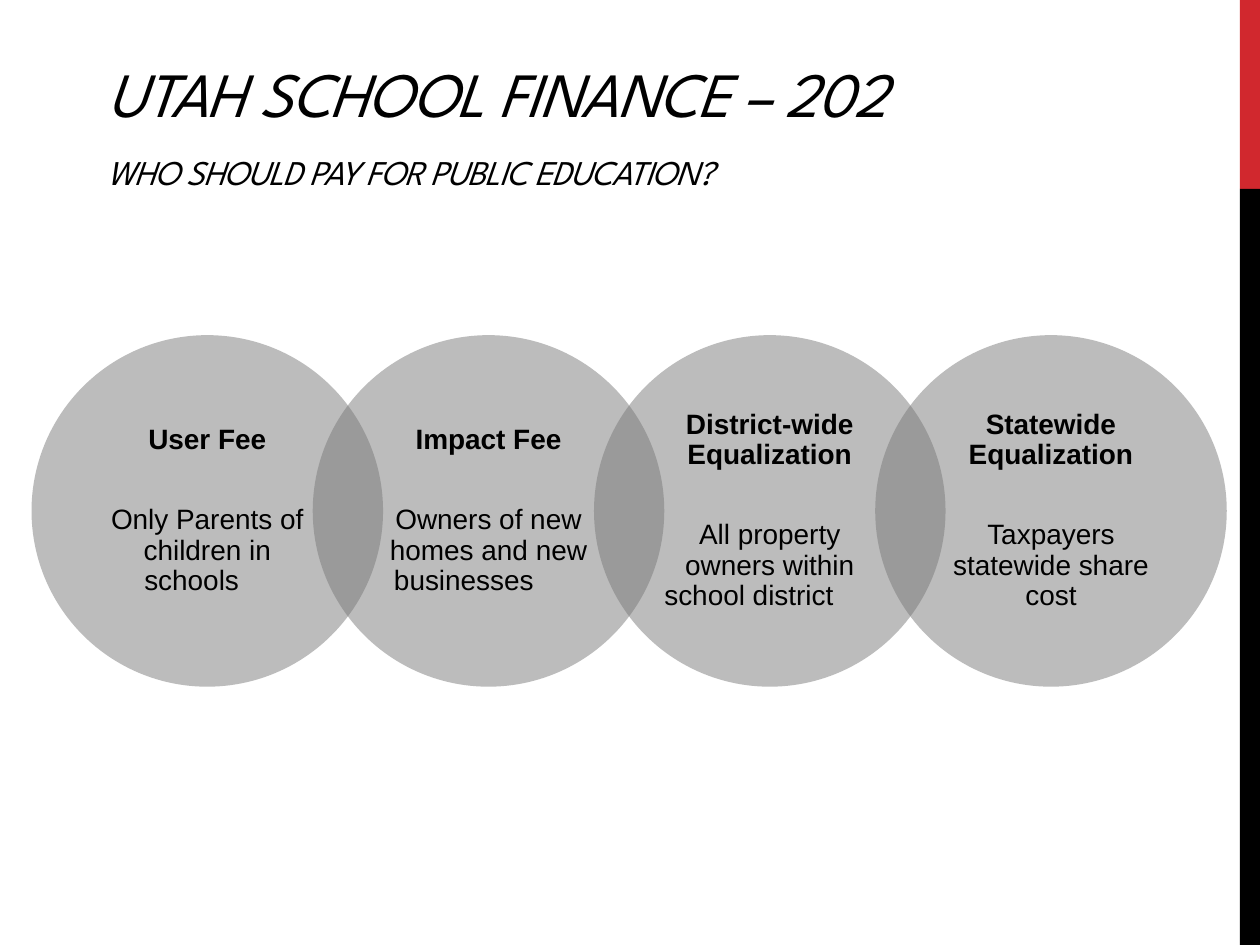
from dataclasses import dataclass

import pptx
import pptx.util
import pptx.dml.color
import pptx.enum.shapes
import pptx.enum.text
import pptx.oxml.ns
from lxml import etree

Inches = pptx.util.Inches
Pt = pptx.util.Pt
RGBColor = pptx.dml.color.RGBColor
Shape = pptx.enum.shapes.MSO_SHAPE
Align = pptx.enum.text.PP_ALIGN
Anchor = pptx.enum.text.MSO_ANCHOR

RED = RGBColor(0xD1, 0x28, 0x2E)
BLACK = RGBColor(0, 0, 0)
GRAY = RGBColor(0x7A, 0x7A, 0x7A)

SIZE = 2.79
STEP = SIZE * 0.8
LEFT = 0.25
TOP = 2.66


@dataclass
class Bar:
    top: float
    height: float
    color: RGBColor


@dataclass
class Payer:
    head: str
    body: str


BARS = [Bar(0, 1.5, RED), Bar(1.5, 6, BLACK)]
PAYERS = [
    Payer("User Fee", "Only Parents of children in schools\t"),
    Payer("Impact Fee", "Owners of new homes and new businesses\t"),
    Payer("District-wide Equalization",
          "All property owners within school district\t\t"),
    Payer("Statewide Equalization", "Taxpayers statewide share cost"),
]


def format(target, values: dict) -> None:
    for name, value in values.items():
        setattr(target, name, value)


def write(para, text: str, color: RGBColor, values: dict):
    run = para.add_run()
    run.text = text
    format(run.font, values)
    run.font.color.rgb = color
    return run


def draw(slide, kind, box: tuple, color: RGBColor):
    shape = slide.shapes.add_shape(kind, *map(Inches, box))
    shape.shadow.inherit = False
    shape.fill.solid()
    shape.fill.fore_color.rgb = color
    shape.line.fill.background()
    return shape


def fade(shape, percent: int) -> None:
    tag = pptx.oxml.ns.qn
    color = shape.fill._xPr.find(tag("a:solidFill")).find(tag("a:srgbClr"))
    etree.SubElement(color, tag("a:alpha"), val=str(percent * 1000))


def add_title(slide) -> None:
    title = slide.shapes.title
    format(title, {"left": Inches(0.75), "top": Inches(0.33),
                   "width": Inches(8.17), "height": Inches(1.25)})
    frame = title.text_frame
    format(frame, {"word_wrap": True, "vertical_anchor": Anchor.BOTTOM,
                   "auto_size": pptx.enum.text.MSO_AUTO_SIZE.NONE})
    para = frame.paragraphs[0]
    format(para, {"alignment": Align.LEFT, "line_spacing": 1.5})
    look = {"name": "League Spartan", "italic": True}
    top = write(para, "UTAH SCHOOL FINANCE – 202", BLACK,
                look | {"size": Pt(36)})
    para.add_line_break()
    sub = write(para, "WHO SHOULD PAY FOR PUBLIC EDUCATION?", BLACK,
                look | {"size": Pt(19.8)})
    for run in (top, sub):
        run.font._rPr.set("spc", "-60")


def add_payer(slide, payer: Payer, left: float) -> None:
    disc = draw(slide, Shape.OVAL, (left, TOP, SIZE, SIZE), GRAY)
    fade(disc, 50)
    frame = disc.text_frame
    format(frame, {"word_wrap": True, "vertical_anchor": Anchor.MIDDLE,
                   "margin_left": Inches(0.15), "margin_right": Inches(0.15),
                   "margin_top": Inches(0.02), "margin_bottom": Inches(0.02)})
    head, body = frame.paragraphs[0], frame.add_paragraph()
    for para, text, bold in ((head, payer.head, True),
                             (body, payer.body, False)):
        format(para, {"alignment": Align.CENTER, "line_spacing": 0.9})
        write(para, text, BLACK,
              {"name": "Arial", "size": Pt(16), "bold": bold})
    head.space_after = Pt(28.6)


def main() -> None:
    deck = pptx.Presentation()
    format(deck, {"slide_width": Inches(10), "slide_height": Inches(7.5)})
    slide = deck.slides.add_slide(deck.slide_layouts[5])
    for bar in BARS:
        draw(slide, Shape.RECTANGLE, (9.84, bar.top, 0.16, bar.height),
             bar.color)
    add_title(slide)
    for place, payer in enumerate(PAYERS):
        add_payer(slide, payer, LEFT + place * STEP)
    deck.save("out.pptx")


if __name__ == "__main__":
    main()
